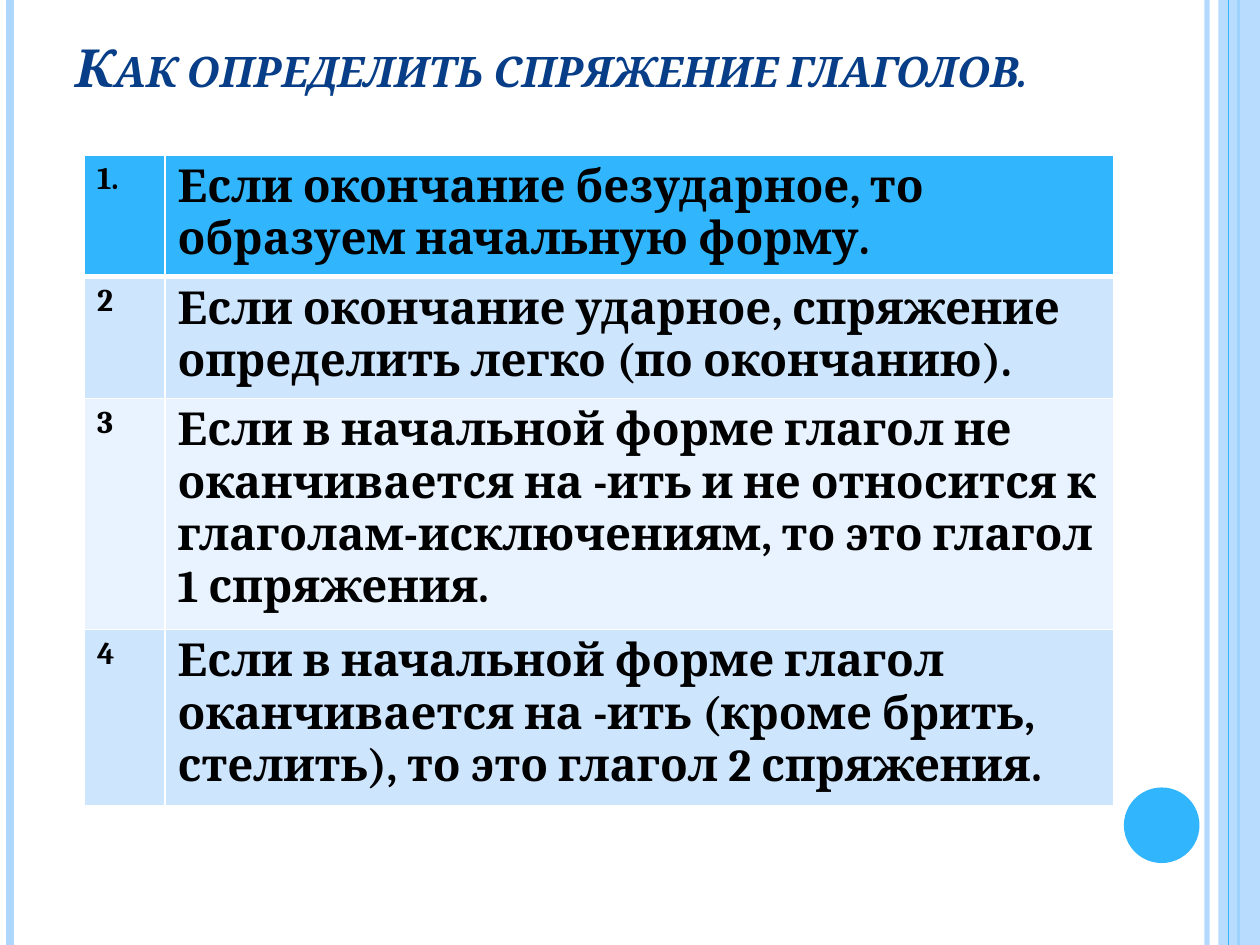
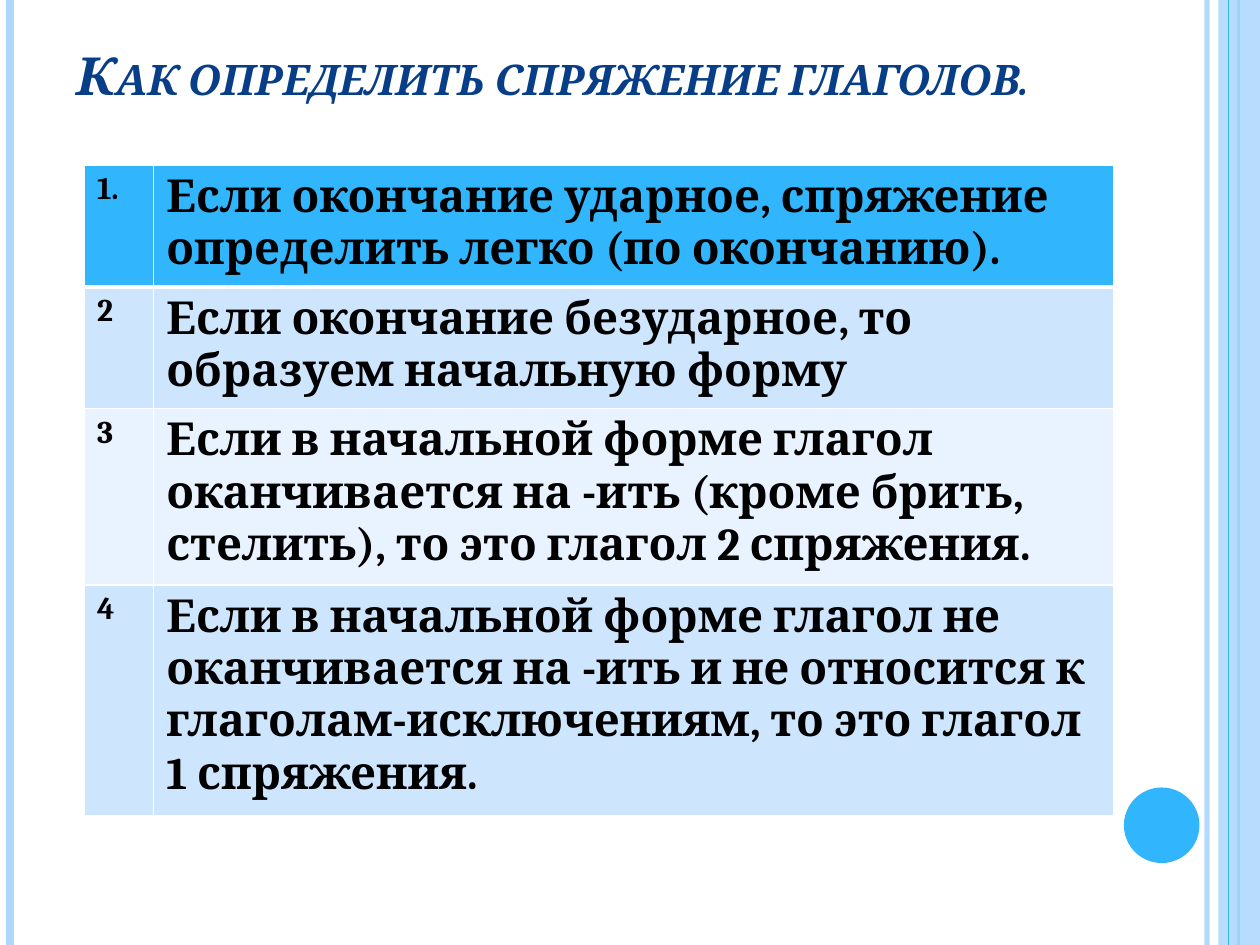
import pptx
import pptx.dml.color
import pptx.enum.shapes
import pptx.enum.text
import pptx.oxml
import pptx.oxml.ns
import pptx.util
from lxml import etree
from pptx.util import Inches

# Shared look
FONT = "Cambria"
WHITE, BLACK, NAVY = "FFFFFF", "000000", "073E87"
BLUE, PALE_BLUE = "31B6FD", "AED7FE"
ROW_FILLS = [BLUE, "CEE5FE", "E8F3FF", "CEE5FE"]
TITLE = "Как определить спряжение глаголов."
TABLE_LEFT, TABLE_WIDTH = 0.67, 8.17
LINE_HEIGHT, CELL_PADDING = 0.42, 0.08

# Rules: text and number of lines it takes
STRESSED = ("Если окончание ударное, спряжение определить легко (по окончанию).", 2)
UNSTRESSED = "Если окончание безударное, то образуем начальную форму"
FIRST_CONJUGATION = (
    "Если в начальной форме глагол не оканчивается на -ить и не относится "
    "к глаголам-исключениям, то это глагол 1 спряжения.", 4)
SECOND_CONJUGATION = (
    "Если в начальной форме глагол оканчивается на -ить "
    "(кроме брить, стелить), то это глагол 2 спряжения.", 3)


def color(hex_text):
    return pptx.dml.color.RGBColor.from_string(hex_text)


def add_child(parent, tag, **attributes):
    child = etree.SubElement(parent, pptx.oxml.ns.qn(tag))
    for name, value in attributes.items():
        child.set(name, str(value))
    return child


def set_opacity(fill, percent):
    """Make a solid fill partly transparent."""
    solid = fill._xPr.find(pptx.oxml.ns.qn("a:solidFill"))
    add_child(solid[0], "a:alpha", val=percent * 1000)


def style_text(paragraph, size, hex_text, italic=False):
    font = paragraph.font
    font.name, font.size = FONT, pptx.util.Pt(size)
    font.bold, font.italic = True, italic
    font.color.rgb = color(hex_text)


def add_stripe(page, x, hex_text, width, opacity=100):
    """Draw a vertical line over the full page height."""
    stripe = page.shapes.add_connector(
        pptx.enum.shapes.MSO_CONNECTOR.STRAIGHT,
        Inches(x), Inches(0), Inches(x), Inches(7.5))
    stripe.line.color.rgb = color(hex_text)
    stripe.line.width = pptx.util.Pt(width)
    if opacity < 100:
        set_opacity(stripe.line.fill, opacity)
    add_child(stripe._element.spPr, "a:effectLst")


def add_plain_shape(page, kind, left, top, width, height, hex_text, opacity=100):
    shape = page.shapes.add_shape(
        kind, Inches(left), Inches(top), Inches(width), Inches(height))
    shape.shadow.inherit = False
    shape.fill.solid()
    shape.fill.fore_color.rgb = color(hex_text)
    shape.line.fill.background()
    if opacity < 100:
        set_opacity(shape.fill, opacity)


def add_frame(page):
    """Draw the side stripes, the right band and the circle."""
    shapes = pptx.enum.shapes.MSO_SHAPE
    add_stripe(page, 9.58, PALE_BLUE, 3, opacity=93)
    add_stripe(page, 0.08, PALE_BLUE, 4.5)
    add_stripe(page, 9.83, BLUE, 1.5)
    add_plain_shape(page, shapes.RECTANGLE, 9.67, 0, 0.33, 7.5, PALE_BLUE, opacity=87)
    add_stripe(page, 9.75, BLUE, 0.75)
    add_plain_shape(page, shapes.OVAL, 8.92, 6.25, 0.6, 0.6, BLUE)


def add_title(page, left, top, height):
    box = page.shapes.add_textbox(
        Inches(left), Inches(top), Inches(8.91), Inches(height))
    box.text_frame.word_wrap = True
    box.text_frame.vertical_anchor = pptx.enum.text.MSO_ANCHOR.BOTTOM
    paragraph = box.text_frame.paragraphs[0]
    span = paragraph.add_run()
    span.text = TITLE
    style_text(paragraph, 30, NAVY, italic=True)
    span._r.get_or_add_rPr().set("cap", "small")


def set_borders(cell, top, bottom):
    """Add white borders, widths in points; they come before the fill."""
    properties = cell._tc.get_or_add_tcPr()
    widths = {"a:lnL": 1, "a:lnR": 1, "a:lnT": top, "a:lnB": bottom}
    for tag, width in widths.items():
        line = add_child(properties, tag, w=pptx.util.Pt(width))
        add_child(add_child(line, "a:solidFill"), "a:srgbClr", val=WHITE)


def fill_cell(cell, text, size, row):
    set_borders(cell, top=3 if row == 1 else 1, bottom=3 if row == 0 else 1)
    cell.fill.solid()
    cell.fill.fore_color.rgb = color(ROW_FILLS[row])
    cell.text = text
    style_text(cell.text_frame.paragraphs[0], size, BLACK)


def add_rules_table(page, top, number_width, rules):
    heights = [lines * LINE_HEIGHT + CELL_PADDING for _, lines in rules]
    table = page.shapes.add_table(
        len(rules), 2, Inches(TABLE_LEFT), Inches(top),
        Inches(TABLE_WIDTH), Inches(sum(heights))).table
    table.columns[0].width = Inches(number_width)
    table.columns[1].width = Inches(TABLE_WIDTH - number_width)
    for row, (text, _) in enumerate(rules):
        table.rows[row].height = Inches(heights[row])
        number = "1." if row == 0 else str(row + 1)
        fill_cell(table.cell(row, 0), number, 18, row)
        fill_cell(table.cell(row, 1), text, 26, row)


def add_page(deck):
    page = deck.slides.add_slide(deck.slide_layouts[6])
    page.background.fill.solid()
    page.background.fill.fore_color.rgb = color(WHITE)
    add_frame(page)
    return page


def main():
    deck = pptx.Presentation()
    deck.slide_width, deck.slide_height = Inches(10), Inches(7.5)

    # Rules in mixed order
    page = add_page(deck)
    add_title(page, 0.5, -0.19, 1.02)
    add_rules_table(page, 1.23, 0.64, [
        (UNSTRESSED + ".", 2), STRESSED, FIRST_CONJUGATION, SECOND_CONJUGATION])

    # Rules in the right order
    page = add_page(deck)
    add_title(page, 0.51, 0.13, 0.76)
    add_rules_table(page, 1.31, 0.55, [
        STRESSED, (UNSTRESSED, 2), SECOND_CONJUGATION, FIRST_CONJUGATION])

    deck.save("out.pptx")


if __name__ == "__main__":
    main()
